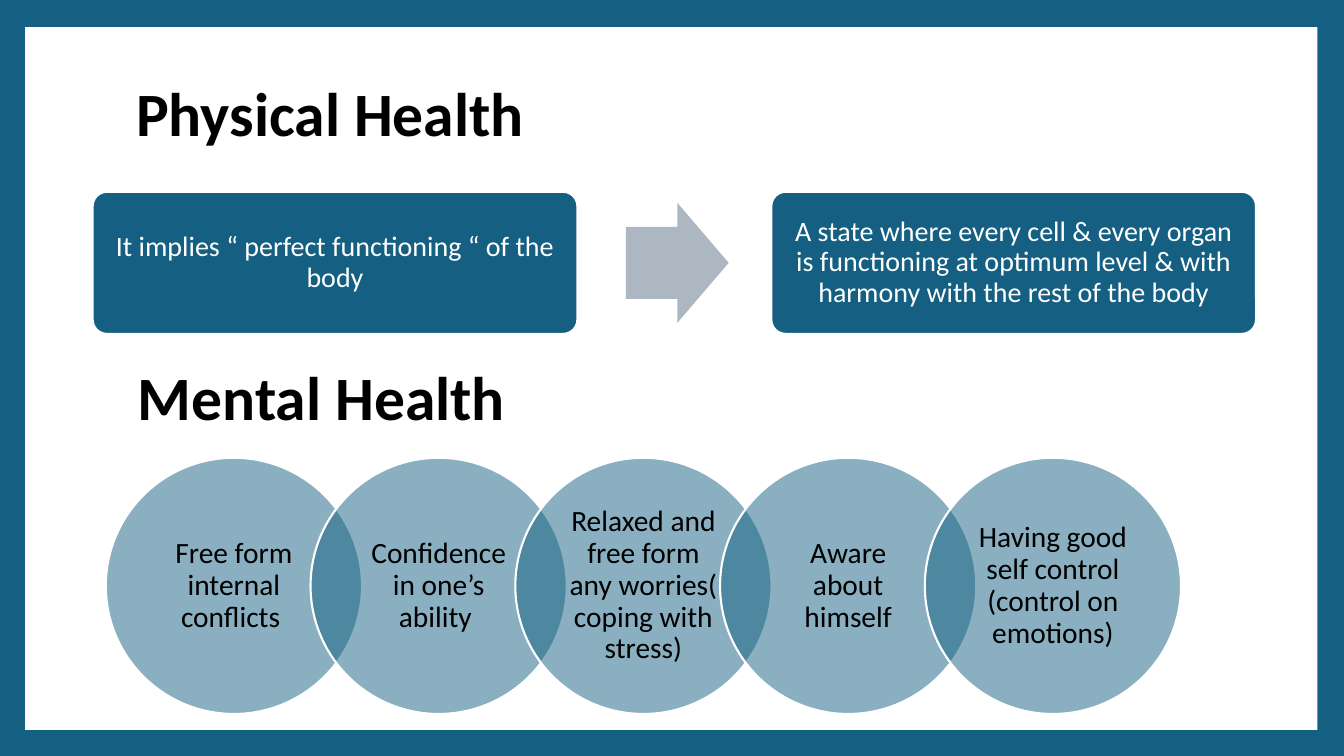
from dataclasses import dataclass
from typing import NamedTuple

from lxml.etree import SubElement
from pptx import Presentation
from pptx.dml.color import RGBColor
from pptx.enum.shapes import MSO_SHAPE
from pptx.enum.text import MSO_ANCHOR, MSO_AUTO_SIZE, PP_ALIGN
from pptx.oxml.ns import qn
from pptx.util import Pt


@dataclass(frozen=True)
class Theme:
    """Colours and type sizes of the slide."""
    teal: RGBColor = RGBColor(0x15, 0x60, 0x82)
    grey: RGBColor = RGBColor(0xAC, 0xB7, 0xC1)
    white: RGBColor = RGBColor(0xFF, 0xFF, 0xFF)
    black: RGBColor = RGBColor(0, 0, 0)
    font: str = "Calibri"
    heading: float = 44
    card: float = 20
    circle: float = 21
    outline: float = 1.5


class Box(NamedTuple):
    """A rectangle in points."""
    left: float
    top: float
    width: float
    height: float

    def lengths(self):
        """Return the four lengths as Pt values."""
        return [Pt(value) for value in self]


THEME = Theme()


def write_text(shape, text, size, color, bold=False, align=PP_ALIGN.CENTER, insets=(7.2, 3.6)):
    """Put one formatted paragraph, vertically centred, in a shape."""
    frame = shape.text_frame
    frame.word_wrap = True
    frame.auto_size = MSO_AUTO_SIZE.NONE
    frame.vertical_anchor = MSO_ANCHOR.MIDDLE
    frame.margin_left = frame.margin_right = Pt(insets[0])
    frame.margin_top = frame.margin_bottom = Pt(insets[1])
    paragraph = frame.paragraphs[0]
    paragraph.alignment = align
    paragraph.line_spacing = 0.9
    run = paragraph.add_run()
    run.text = text
    run.font.name = THEME.font
    run.font.size = Pt(size)
    run.font.bold = bold
    run.font.color.rgb = color


def add_filled(slide, kind, box, color, outlined=False, opacity=100):
    """Add a flat preset shape with an optional white outline."""
    shape = slide.shapes.add_shape(kind, *box.lengths())
    shape.shadow.inherit = False
    shape.fill.solid()
    shape.fill.fore_color.rgb = color
    if opacity < 100:
        color_element = shape._element.spPr.find(qn("a:solidFill"))[0]
        SubElement(color_element, qn("a:alpha"), val=str(opacity * 1000))
    if outlined:
        shape.line.color.rgb = THEME.white
        shape.line.width = Pt(THEME.outline)
    else:
        shape.line.fill.background()
    return shape


def add_frame(slide, box):
    """Draw the white panel on the teal background."""
    slide.background.fill.solid()
    slide.background.fill.fore_color.rgb = THEME.teal
    panel = add_filled(slide, MSO_SHAPE.RECTANGLE, box, THEME.white)
    tree = slide.shapes._spTree
    tree.remove(panel._element)
    tree.insert(2, panel._element)


def place_heading(shape, box, text):
    """Move a heading to its box and write it."""
    shape.left, shape.top, shape.width, shape.height = box.lengths()
    write_text(shape, text, THEME.heading, THEME.black, bold=True, align=PP_ALIGN.LEFT)


def add_process(slide, box, first, second):
    """Draw two cards at the ends of the box with an arrow between them."""
    card_width = box.width / 2.4
    arrow_height = card_width * 0.248
    for left, text in ((box.left, first), (box.left + box.width - card_width, second)):
        card = add_filled(slide, MSO_SHAPE.ROUNDED_RECTANGLE,
                          Box(left, box.top, card_width, box.height), THEME.teal, outlined=True)
        card.adjustments[0] = 0.1
        write_text(card, text, THEME.card, THEME.white, insets=(6, 6))
    arrow_box = Box(box.left + card_width * 1.1, box.top + (box.height - arrow_height) / 2,
                    card_width * 0.212, arrow_height)
    arrow = add_filled(slide, MSO_SHAPE.RIGHT_ARROW, arrow_box, THEME.grey)
    arrow.adjustments[0] = 0.6
    arrow.adjustments[1] = 0.5


def add_circle_chain(slide, box, texts):
    """Draw overlapping translucent circles evenly across the box."""
    diameter = box.height
    step = (box.width - diameter) / (len(texts) - 1)
    for index, text in enumerate(texts):
        circle = add_filled(slide, MSO_SHAPE.OVAL,
                            Box(box.left + index * step, box.top, diameter, diameter),
                            THEME.teal, outlined=True, opacity=50)
        write_text(circle, text, THEME.circle, THEME.black, insets=(10, 2))


def build_health_slide(presentation):
    """Build the slide on physical and mental health."""
    slide = presentation.slides.add_slide(presentation.slide_layouts[5])
    add_frame(slide, Box(18, 19.4, 923, 502))
    place_heading(slide.shapes.title, Box(90, 30, 778, 107), "Physical Health")
    add_circle_chain(slide, Box(75.6, 327, 768, 183), [
        "Free form internal conflicts ",
        "Confidence in one’s ability ",
        "Relaxed and free form any worries( coping with stress)",
        "Aware about himself",
        "Having good self control (control on emotions)",
    ])
    add_process(slide, Box(66.2, 137, 831, 101.5),
                "It implies “ perfect functioning “ of the body",
                "A state where every cell & every organ is functioning at optimum level "
                "& with harmony with the rest of the body")
    heading_box = Box(91.4, 243.4, 697, 85.7)
    place_heading(slide.shapes.add_textbox(*heading_box.lengths()), heading_box, "Mental Health")


def main():
    """Create and save the presentation."""
    presentation = Presentation()
    presentation.slide_width = Pt(960)
    presentation.slide_height = Pt(540)
    build_health_slide(presentation)
    presentation.save("out.pptx")


if __name__ == "__main__":
    main()
